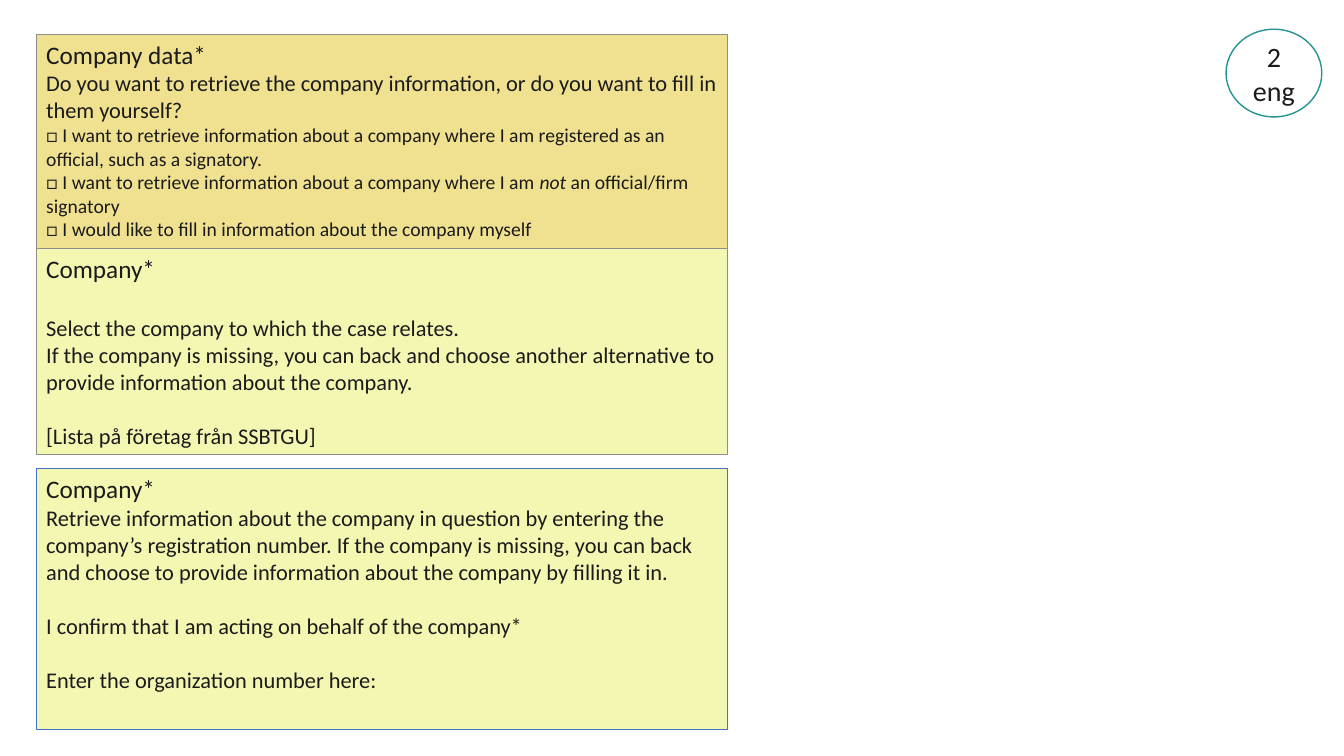
import pptx
import pptx.util
import pptx.dml.color
import pptx.enum.shapes
import pptx.enum.text

Inches = pptx.util.Inches
Pt = pptx.util.Pt
SHAPE = pptx.enum.shapes.MSO_SHAPE
ALIGN = pptx.enum.text.PP_ALIGN
ANCHOR = pptx.enum.text.MSO_ANCHOR

COLORS = {
    "ink": "1B1B1B",
    "white": "FFFFFF",
    "gold": "F0E190",
    "lemon": "F4F7B2",
    "gray": "8D8D8D",
    "blue": "4472C4",
    "teal": "259490",
}
HEADING, BODY, OPTION, BADGE = 18, 16, 14, 20
BODY_GAP, HEADING_GAP = 19.5, 22


class FormSlide:
    def __init__(self, deck):
        self.slide = deck.slides.add_slide(deck.slide_layouts[6])
        self.font = {"name": "Calibri"}

    def color(self, name):
        return pptx.dml.color.RGBColor.from_string(COLORS[name])

    def outline(self, kind, place, fill, line, width):
        shape = self.slide.shapes.add_shape(kind, *map(Inches, place))
        shape.shadow.inherit = False
        shape.fill.solid()
        shape.fill.fore_color.rgb = self.color(fill)
        shape.line.color.rgb = self.color(line)
        shape.line.width = Pt(width)
        shape.text_frame.word_wrap = True
        return shape

    def fill_paragraph(self, paragraph, runs, size, align, gap=0):
        """Fill a paragraph from (text, italic) runs, with a gap in points above."""
        paragraph.alignment = align
        if gap:
            paragraph.space_before = Pt(gap)
        for text, italic in runs:
            run = paragraph.add_run()
            run.text = text
            for key, value in {**self.font, "size": Pt(size), "italic": italic}.items():
                setattr(run.font, key, value)
            run.font.color.rgb = self.color("ink")

    def panel(self, place, fill, line, heading, lines):
        """Draw a form box; each line is (runs, size, gap above)."""
        frame = self.outline(SHAPE.RECTANGLE, place, fill, line, 0.5).text_frame
        frame.vertical_anchor = ANCHOR.TOP
        self.fill_paragraph(frame.paragraphs[0], [(heading, False)], HEADING, ALIGN.LEFT)
        for runs, size, gap in lines:
            self.fill_paragraph(frame.add_paragraph(), runs, size, ALIGN.LEFT, gap)

    def badge(self, place, label):
        frame = self.outline(SHAPE.OVAL, place, "white", "teal", 1).text_frame
        frame.vertical_anchor = ANCHOR.MIDDLE
        self.fill_paragraph(frame.paragraphs[0], [(label, False)], BADGE, ALIGN.CENTER)


def plain(text, size=BODY, gap=0):
    return [(text, False)], size, gap


def main():
    deck = pptx.Presentation()
    deck.slide_width, deck.slide_height = Inches(13.33), Inches(7.5)
    form = FormSlide(deck)

    form.panel((0.36, 0.34, 6.85, 2.19), "gold", "gray", "Company data*", [
        plain("Do you want to retrieve the company information, "
              "or do you want to fill in them yourself?"),
        plain("□ I want to retrieve information about a company where I am "
              "registered as an official, such as a signatory.", OPTION),
        ([("□ I want to retrieve information about a company where I am ", False),
          ("not", True),
          (" an official/firm signatory", False)], OPTION, 0),
        plain("□ I would like to fill in information about the company myself", OPTION),
    ])
    form.badge((12.16, 0.29, 0.95, 0.87), "2 eng")
    form.panel((0.36, 2.46, 6.86, 2.05), "lemon", "gray", "Company*", [
        plain("Select the company to which the case relates.", gap=HEADING_GAP),
        plain("If the company is missing, you can back and choose "
              "another alternative to provide information about the company."),
        plain("[Lista på företag från SSBTGU]", gap=BODY_GAP),
    ])
    form.panel((0.36, 4.65, 6.86, 2.59), "lemon", "blue", "Company*", [
        plain("Retrieve information about the company in question by entering the "
              "company’s registration number. If the company is missing, you can back "
              "and choose to provide information about the company by filling it in."),
        plain("I confirm that I am acting on behalf of the company*", gap=BODY_GAP),
        plain("Enter the organization number here:", gap=BODY_GAP),
    ])
    deck.save("out.pptx")


if __name__ == "__main__":
    main()
